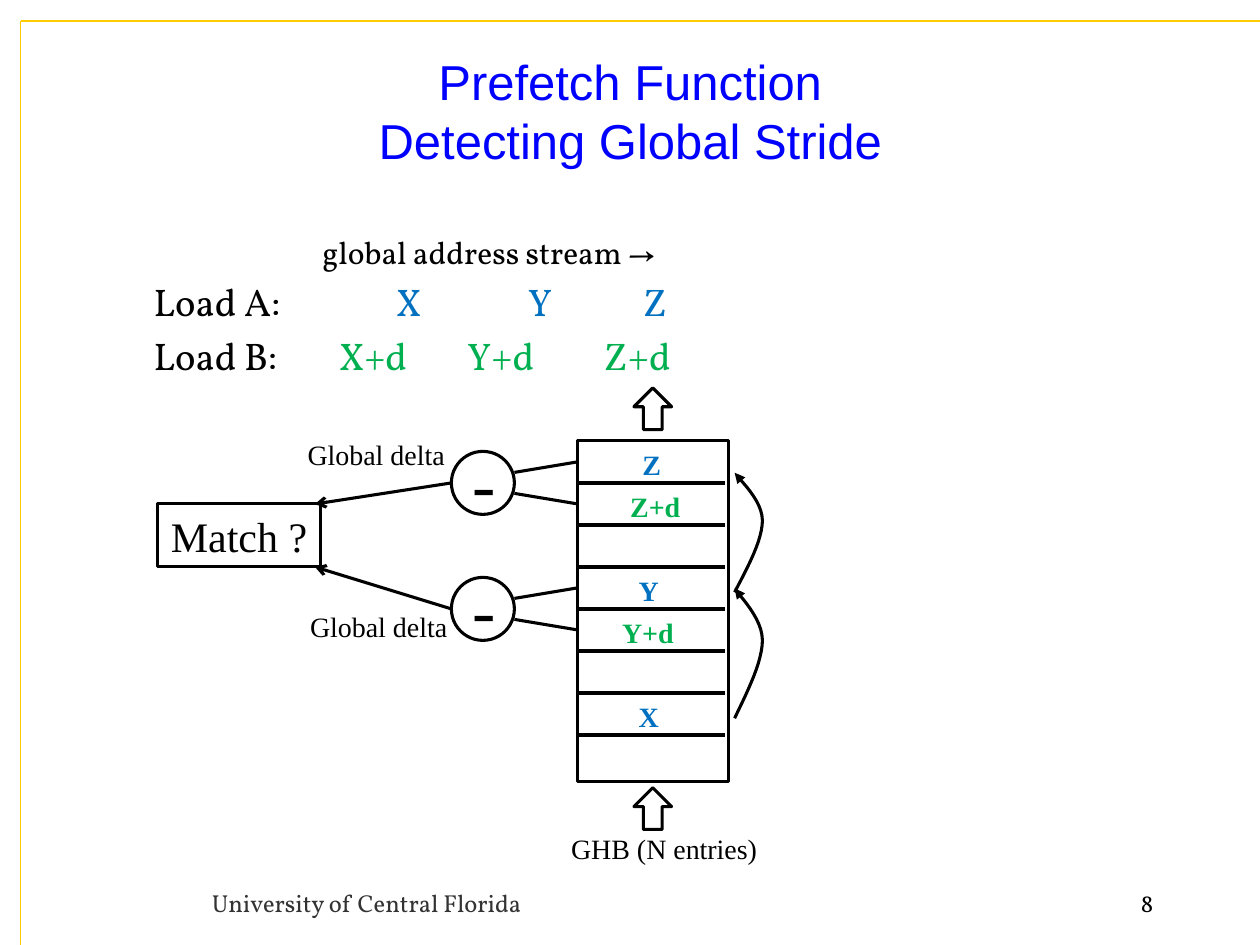
from dataclasses import dataclass

from lxml.etree import SubElement
from pptx import Presentation
from pptx.dml.color import RGBColor
from pptx.enum.shapes import MSO_CONNECTOR as Link, MSO_SHAPE as Preset
from pptx.enum.text import MSO_ANCHOR as Anchor, PP_ALIGN as Align
from pptx.oxml.ns import qn
from pptx.util import Cm, Pt


@dataclass(frozen=True)
class Theme:
    ink: str = "000000"
    title: str = "0000FF"
    load_a: str = "0070C0"
    load_b: str = "00B050"
    footer: str = "333333"
    frame: str = "FFCC00"
    sans: str = "Arial"
    serif: str = "Times New Roman"
    body: str = "Vollkorn"
    title_size: float = 28
    load_size: float = 22
    stream_size: float = 18
    label_size: float = 16
    match_size: float = 24
    minus_size: float = 40
    footer_size: float = 14
    stroke: float = 1.75


THEME = Theme()

# Geometry of the history buffer, in cm
GHB_LEFT, GHB_TOP, GHB_WIDTH, GHB_HEIGHT = 11.64, 8.89, 3.05, 6.86
ROW = 2.54 / 3
CIRCLE = 1.27
CIRCLE_LEFT = GHB_LEFT - 2 * CIRCLE


def add_text(paragraph, text, *, size=THEME.label_size, font=THEME.serif,
             color=THEME.ink, bold=False):
    """Append text to a paragraph; each newline becomes a line break."""
    for number, line in enumerate(text.split("\n")):
        if number:
            paragraph.add_line_break()
        run = paragraph.add_run()
        run.text = line
        run.font.size = Pt(size)
        run.font.name = font
        run.font.bold = bold
        run.font.color.rgb = RGBColor.from_string(color)


def add_label(slide, text, left, top, width, height, *, align=Align.CENTER,
              anchor=Anchor.TOP, wrap=False, inset=None, **text_format):
    frame = slide.shapes.add_textbox(
        Cm(left), Cm(top), Cm(width), Cm(height)).text_frame
    frame.word_wrap = wrap
    frame.vertical_anchor = anchor
    if inset is not None:
        frame.margin_left = frame.margin_right = Cm(inset)
        frame.margin_top = frame.margin_bottom = Cm(inset)
    frame.paragraphs[0].alignment = align
    add_text(frame.paragraphs[0], text, **text_format)


def style_outline(shape):
    shape.shadow.inherit = False
    shape.fill.background()
    shape.line.color.rgb = RGBColor.from_string(THEME.ink)
    shape.line.width = Pt(THEME.stroke)


def add_outline(slide, preset, left, top, width, height):
    shape = slide.shapes.add_shape(
        preset, Cm(left), Cm(top), Cm(width), Cm(height))
    style_outline(shape)
    return shape


def add_arrowhead(shape, kind):
    SubElement(shape.line._get_or_add_ln(), qn("a:tailEnd"), type=kind)


def add_line(slide, start, end, *, color=THEME.ink, width=THEME.stroke, head=None):
    line = slide.shapes.add_connector(
        Link.STRAIGHT, *(Cm(value) for value in (*start, *end)))
    line.line.color.rgb = RGBColor.from_string(color)
    line.line.width = Pt(width)
    if head:
        add_arrowhead(line, head)
    SubElement(line._element.spPr, qn("a:effectLst"))


def bezier(points, t):
    weights = ((1 - t) ** 3, 3 * t * (1 - t) ** 2, 3 * t * t * (1 - t), t ** 3)
    return tuple(Cm(sum(w * point[axis] for w, point in zip(weights, points)))
                 for axis in (0, 1))


def add_stride_arrow(slide, top, height):
    """Bulging arrow from an older entry up to a newer one."""
    left, right = 14.81, 15.37
    middle = top + 0.4 * height
    lower = [(left, top + height), (15.09, top + 0.78 * height),
             (right, top + 0.56 * height), (right, middle)]
    upper = [(right, middle), (right, top + 0.23 * height),
             (14.91, top + 0.06 * height), (left, top)]
    steps = [step / 12 for step in range(1, 13)]
    outline = slide.shapes.build_freeform(*bezier(lower, 0), scale=1.0)
    outline.add_line_segments(
        [bezier(half, t) for half in (lower, upper) for t in steps], close=False)
    arrow = outline.convert_to_shape()
    style_outline(arrow)
    add_arrowhead(arrow, "triangle")


def add_tabs(paragraph, stops):
    tabs = SubElement(paragraph._p.get_or_add_pPr(), qn("a:tabLst"))
    for stop in stops:
        SubElement(tabs, qn("a:tab"), pos=str(Cm(stop)), algn="l")


def add_address_stream(slide):
    frame = slide.shapes.add_textbox(Cm(1.9), Cm(4.24), Cm(21.6), Cm(3.81)).text_frame
    frame.word_wrap = True
    frame.margin_left = Cm(1.2)
    heading = frame.paragraphs[0]
    heading.line_spacing = Pt(30.8)
    heading._p.get_or_add_pPr().set("marL", str(Cm(3.4)))
    add_text(heading, "global address stream →",
             size=THEME.stream_size, font=THEME.body)
    loads = [
        ("Load A:", ("X", "Y", "Z"), (4.88, 7.54, 9.86), THEME.load_a),
        ("Load B:", ("X+d", "Y+d", "Z+d"), (3.73, 6.32, 9.07), THEME.load_b),
    ]
    for name, addresses, stops, color in loads:
        load = frame.add_paragraph()
        load.line_spacing = Pt(30.8)
        add_tabs(load, stops)
        add_text(load, name, size=THEME.load_size, font=THEME.body)
        add_text(load, "".join("\t" + address for address in addresses),
                 size=THEME.load_size, font=THEME.body, color=color)


def add_history_buffer(slide):
    add_outline(slide, Preset.RECTANGLE, GHB_LEFT, GHB_TOP, GHB_WIDTH, GHB_HEIGHT)
    for row in range(1, 8):
        y = GHB_TOP + row * ROW
        add_line(slide, (GHB_LEFT, y), (14.61, y))
    # Row, entry, horizontal centre
    entries = [(0, "Z", 13.14), (1, "Z+d", 13.21), (3, "Y", 13.08),
               (4, "Y+d", 13.06), (6, "X", 13.08)]
    for row, entry, center in entries:
        add_label(slide, entry, center - 0.8, GHB_TOP + row * ROW, 1.6, 0.94, bold=True,
                  color=THEME.load_b if "+" in entry else THEME.load_a)
    for top in (7.82, 15.88):
        add_outline(slide, Preset.UP_ARROW, 12.78, top, 0.76, 0.84)
    add_label(slide, "GHB (N entries)", 11.23, 16.64, 4.32, 0.94)
    for top, height in ((9.53, 2.41), (11.86, 2.62)):
        add_stride_arrow(slide, top, height)


def add_subtractor(slide, top, match_corner, label_at):
    """Circle that takes the difference of two neighbouring entries."""
    middle = top + CIRCLE / 2
    for side in (-1, 1):
        add_line(slide, (GHB_LEFT, middle + side * ROW / 2),
                 (CIRCLE_LEFT + CIRCLE, middle + side * ROW / 4))
    add_outline(slide, Preset.OVAL, CIRCLE_LEFT, top, CIRCLE, CIRCLE)
    add_label(slide, "-", CIRCLE_LEFT + 0.42, top - 0.23, 0.43, 1.7,
              wrap=True, inset=0, size=THEME.minus_size)
    add_line(slide, (CIRCLE_LEFT, middle), match_corner, head="arrow")
    add_label(slide, "Global delta", *label_at, 3.33, 0.94)


def add_match_box(slide):
    match = add_outline(slide, Preset.RECTANGLE, 3.18, 10.16, 3.28, 1.27)
    frame = match.text_frame
    frame.word_wrap = False
    frame.vertical_anchor = Anchor.MIDDLE
    frame.paragraphs[0].alignment = Align.CENTER
    add_text(frame.paragraphs[0], "Match ?", size=THEME.match_size)


def main():
    deck = Presentation()
    deck.slide_width, deck.slide_height = Cm(25.4), Cm(19.05)
    slide = deck.slides.add_slide(deck.slide_layouts[6])

    # Frame lines and title
    corner = (0.42, 0.42)
    add_line(slide, corner, (0.42, 19.05), color=THEME.frame, width=0.75)
    add_line(slide, corner, (25.4, 0.42), color=THEME.frame, width=1)
    add_label(slide, "Prefetch Function\nDetecting Global Stride", 0.64, 1.27, 24.13, 1.9,
              anchor=Anchor.MIDDLE, wrap=True, size=THEME.title_size,
              font=THEME.sans, color=THEME.title)

    # Address stream and diagram
    add_address_stream(slide)
    add_history_buffer(slide)
    add_match_box(slide)
    add_subtractor(slide, 9.1, (6.35, 10.16), (5.92, 8.69))
    add_subtractor(slide, 11.64, (6.35, 11.43), (5.97, 12.17))

    # Footer
    add_label(slide, "University of Central Florida", 4.02, 17.78, 17.35, 0.85,
              align=Align.LEFT, wrap=True, size=THEME.footer_size,
              font=THEME.body, color=THEME.footer)
    add_label(slide, "8", 21.17, 17.78, 2.33, 0.85, align=Align.RIGHT, wrap=True,
              size=THEME.footer_size, font=THEME.body)

    deck.save("out.pptx")


if __name__ == "__main__":
    main()
